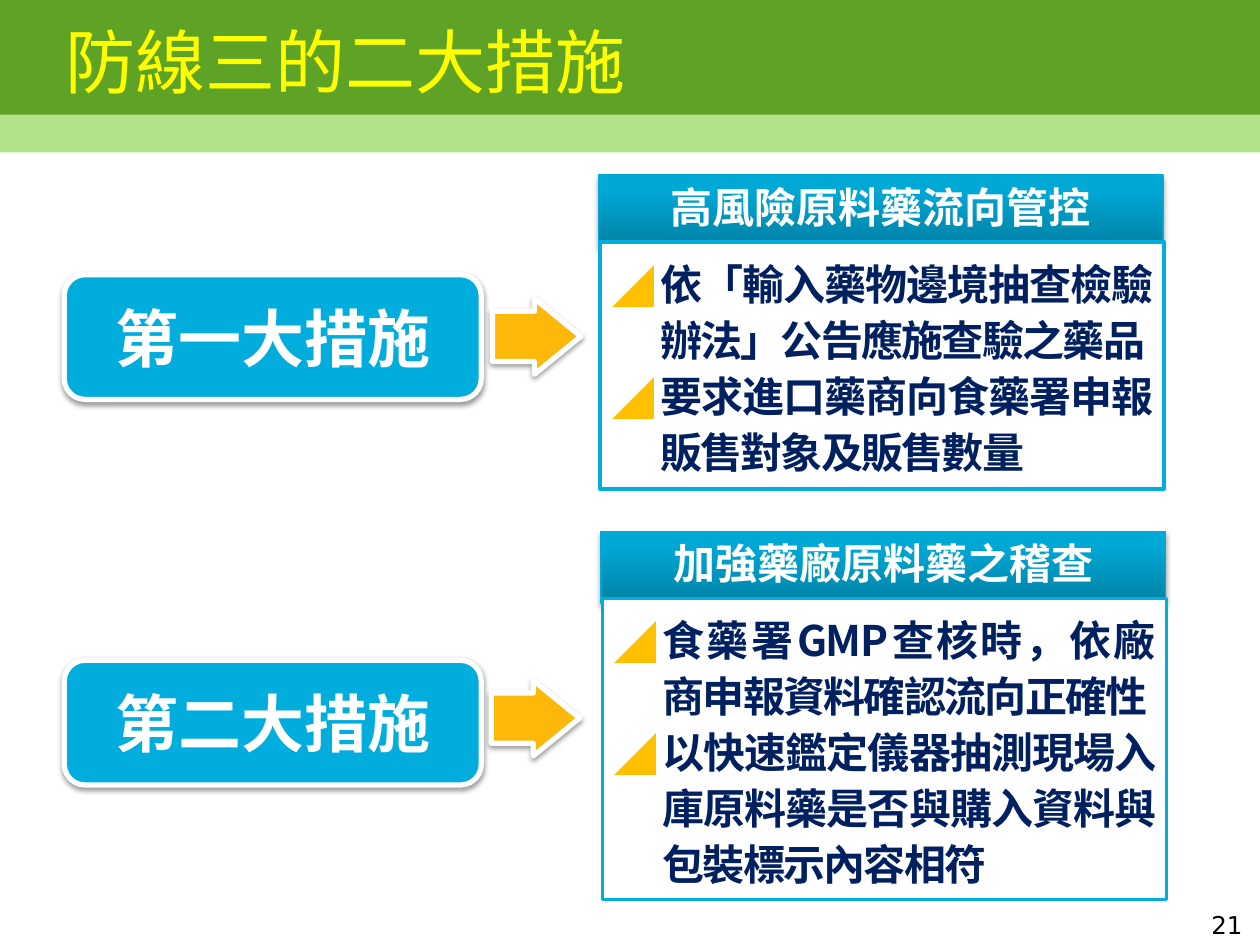
from lxml.etree import SubElement
from pptx import Presentation
from pptx.dml.color import RGBColor
from pptx.enum.shapes import MSO_SHAPE as Shape
from pptx.enum.text import MSO_ANCHOR as Anchor, PP_ALIGN as Align
from pptx.oxml.ns import qn
from pptx.util import Inches, Pt

TITLE = "防線三的二大措施"
PAGE = "21"
MEASURES = [
    {
        "name": "第一大措施", "heading": "高風險原料藥流向管控",
        "points": ["依「輸入藥物邊境抽查檢驗辦法」公告應施查驗之藥品",
                   "要求進口藥商向食藥署申報販售對象及販售數量"],
        "name_top": 2.18, "arrow": (3.91, 2.37), "panel": (4.75, 1.39), "depth": 1.96,
    },
    {
        "name": "第二大措施", "heading": "加強藥廠原料藥之稽查",
        "points": ["食藥署GMP查核時，依廠商申報資料確認流向正確性",
                   "以快速鑑定儀器抽測現場入庫原料藥是否與購入資料與包裝標示內容相符"],
        "name_top": 5.24, "arrow": (3.9, 5.4), "panel": (4.77, 4.22), "depth": 2.39,
    },
]
COLORS = {
    "band": "5FA326", "strip": "B2E389", "title": "FFFF00", "white": "FFFFFF",
    "black": "000000", "blue": "00ADDC", "edge": "00A9D7", "arrow": "FEB80A",
    "bullet": "FFC000", "navy": "002060",
}
HEADING_STOPS = [(0, "0081A4"), (80, "00A8D5"), (100, "00A8D6")]
CJK = "Noto Sans CJK SC"
PANEL_WIDTH, HEADING_HEIGHT, BODY_DROP = 4.48, 0.57, 0.53
HANG = 0.38
NAME_FONT = {"size": Pt(36), "name": CJK, "bold": True}
PANEL_FONT = {"size": Pt(24), "name": CJK, "bold": True}

deck = Presentation()
deck.slide_width, deck.slide_height = Inches(10), Inches(7.5)
slide = deck.slides.add_slide(deck.slide_layouts[5])


def rgb(key):
    return RGBColor.from_string(COLORS[key])


def add_block(kind, box, fill, edge=None, edge_width=0):
    block = slide.shapes.add_shape(kind, *map(Inches, box))
    block.shadow.inherit = False
    block.fill.solid()
    block.fill.fore_color.rgb = rgb(fill)
    if edge:
        block.line.color.rgb = rgb(edge)
        block.line.width = Pt(edge_width)
    else:
        block.line.fill.background()
    return block


def add_shadow(block, opacity, distance):
    effects = block._element.spPr.find(qn("a:effectLst"))
    shadow = SubElement(effects, qn("a:outerShdw"), blurRad=str(Pt(3.1)),
                        dist=str(Pt(distance)), dir="5400000", rotWithShape="0")
    color = SubElement(shadow, qn("a:srgbClr"), val=COLORS["black"])
    SubElement(color, qn("a:alpha"), val=str(opacity * 1000))


def add_gradient(block):
    block.fill.gradient()
    block.fill.gradient_angle = 90
    stops = block._element.spPr.find(qn("a:gradFill")).find(qn("a:gsLst"))
    for stop in list(stops):
        stops.remove(stop)
    for share, color in HEADING_STOPS:
        stop = SubElement(stops, qn("a:gs"), pos=str(share * 1000))
        SubElement(stop, qn("a:srgbClr"), val=color)


def write(paragraph, text, color, font, align):
    paragraph.alignment = align
    run = paragraph.add_run()
    run.text = text
    for field, value in font.items():
        setattr(run.font, field, value)
    run.font.color.rgb = rgb(color)
    SubElement(run._r.get_or_add_rPr(), qn("a:ea"), typeface=CJK)
    return run


def write_block(block, text, color, font, align=Align.CENTER, anchor=Anchor.MIDDLE):
    frame = block.text_frame
    frame.word_wrap = True
    frame.vertical_anchor = anchor
    write(frame.paragraphs[0], text, color, font, align)


def write_points(block, points):
    frame = block.text_frame
    frame.word_wrap = True
    frame.vertical_anchor = Anchor.MIDDLE
    for index, point in enumerate(points):
        paragraph = frame.add_paragraph() if index else frame.paragraphs[0]
        paragraph.line_spacing = Pt(32)
        run = write(paragraph, point, "navy", PANEL_FONT, Align.JUSTIFY)
        run._r.get_or_add_rPr().set("spc", "-100")
        layout = paragraph._p.get_or_add_pPr()
        layout.set("marL", str(Inches(HANG)))
        layout.set("indent", str(-Inches(HANG)))
        tint = SubElement(layout, qn("a:buClr"))
        SubElement(tint, qn("a:srgbClr"), val=COLORS["bullet"])
        SubElement(layout, qn("a:buFont"), typeface=CJK)
        SubElement(layout, qn("a:buChar"), char="◢")


def add_measure(measure):
    name = add_block(Shape.ROUNDED_RECTANGLE, (0.51, measure["name_top"], 3.31, 0.99),
                     "blue", "white", 3)
    add_shadow(name, 38, 1.6)
    write_block(name, measure["name"], "white", NAME_FONT)

    left, top = measure["panel"]
    heading = add_block(Shape.RECTANGLE, (left, top, PANEL_WIDTH, HEADING_HEIGHT),
                        "blue", "edge", 0.75)
    add_gradient(heading)
    add_shadow(heading, 35, 1.8)
    write_block(heading, measure["heading"], "white", PANEL_FONT, anchor=Anchor.TOP)

    body = add_block(Shape.RECTANGLE,
                     (left + 0.01, top + BODY_DROP, PANEL_WIDTH, measure["depth"]),
                     "white", "blue", 2)
    write_points(body, measure["points"])

    arrow = add_block(Shape.RIGHT_ARROW, (*measure["arrow"], 0.7, 0.6), "arrow", "white", 3)
    arrow.adjustments[0], arrow.adjustments[1] = 0.667, 0.611
    add_shadow(arrow, 38, 1.6)


strip = add_block(Shape.RECTANGLE, (0, 0.87, 10, 0.34), "strip")
band = add_block(Shape.RECTANGLE, (0, 0, 10, 0.91), "band")

title = slide.shapes.title
for side, value in {"left": 0.42, "top": 0.17, "width": 9.23, "height": 0.62}.items():
    setattr(title, side, Inches(value))
write_block(title, TITLE, "title", {"size": Pt(40), "name": "Arial"}, Align.LEFT)
band._element.addnext(title._element)

page = slide.shapes.add_textbox(*map(Inches, (7.63, 7.17, 2.33, 0.26)))
write_block(page, PAGE, "black", {"size": Pt(14), "name": "DejaVu Sans"},
            Align.RIGHT, Anchor.TOP)

for measure in MEASURES:
    add_measure(measure)

deck.save("out.pptx")
